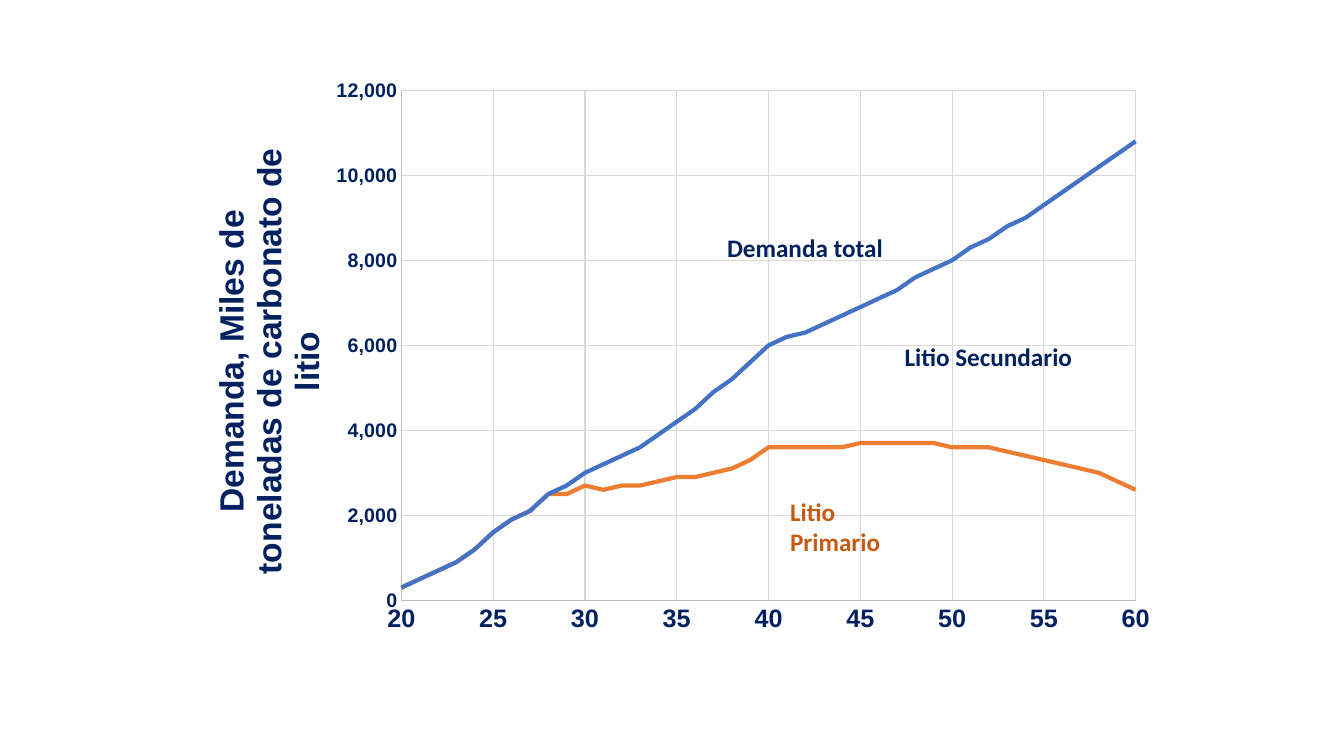
import pptx
import pptx.chart.data
import pptx.dml.color
import pptx.enum.chart
import pptx.enum.text
import pptx.util
from pptx.oxml import parse_xml
from pptx.oxml.ns import nsdecls, qn

RGBColor = pptx.dml.color.RGBColor
NAVY = RGBColor(0x00, 0x20, 0x60)
RUST = RGBColor(0xC5, 0x5A, 0x11)
BLUE = RGBColor(0x44, 0x72, 0xC4)
ORANGE = RGBColor(0xED, 0x7D, 0x31)
AXIS_GREY = RGBColor(0xBF, 0xBF, 0xBF)
GRID_GREY = RGBColor(0xD9, 0xD9, 0xD9)
BLACK = RGBColor(0x00, 0x00, 0x00)

YEARS = range(20, 61)
SHARED_START = [300, 500, 700, 900, 1200, 1600, 1900, 2100, 2500]
TOTAL_DEMAND = SHARED_START + [
    2700, 3000, 3200, 3400, 3600, 3900, 4200, 4500, 4900, 5200, 5600, 6000,
    6200, 6300, 6500, 6700, 6900, 7100, 7300, 7600, 7800, 8000, 8300, 8500,
    8800, 9000, 9300, 9600, 9900, 10200, 10500, 10800]
PRIMARY_LITHIUM = SHARED_START + [
    2500, 2700, 2600, 2700, 2700, 2800, 2900, 2900, 3000, 3100, 3300, 3600,
    3600, 3600, 3600, 3600, 3700, 3700, 3700, 3700, 3700, 3600, 3600, 3600,
    3500, 3400, 3300, 3200, 3100, 3000, 2800, 2600]


def px(length):
    return pptx.util.Emu(length * 9525)


class DemandSlide:
    chart_font = "Arial"
    label_font = "Calibri"

    def __init__(self, presentation):
        self.slide = presentation.slides.add_slide(presentation.slide_layouts[6])

    def style_font(self, font, name, size, color, bold=True):
        font.name = name
        font.size = pptx.util.Pt(size)
        font.bold = bold
        font.color.rgb = color

    def style_line(self, line, color, width):
        line.color.rgb = color
        line.width = pptx.util.Pt(width)

    def place(self, element, **fractions):
        target = "<c:layoutTarget val='inner'/>" if "w" in fractions else ""
        modes = "".join(f"<c:{key}Mode val='edge'/>" for key in "xy")
        values = "".join(f"<c:{key} val='{value}'/>" for key, value in fractions.items())
        layout = element.find(qn("c:layout"))
        if layout is None:
            layout = parse_xml(f"<c:layout {nsdecls('c')}/>")
            tx = element.find(qn("c:tx"))
            element.insert(0 if tx is None else 1, layout)
        for child in list(layout):
            layout.remove(child)
        layout.append(parse_xml(
            f"<c:manualLayout {nsdecls('c')}>{target}{modes}{values}</c:manualLayout>"))

    def axis(self, axis, low, high, step, size):
        axis.minimum_scale = low
        axis.maximum_scale = high
        axis.major_unit = step
        axis.has_major_gridlines = True
        axis.major_tick_mark = pptx.enum.chart.XL_TICK_MARK.NONE
        axis.minor_tick_mark = pptx.enum.chart.XL_TICK_MARK.NONE
        self.style_line(axis.major_gridlines.format.line, GRID_GREY, 0.75)
        self.style_line(axis.format.line, AXIS_GREY, 0.75)
        self.style_font(axis.tick_labels.font, self.chart_font, size, NAVY)

    def axis_title(self, axis, text):
        title = axis.axis_title
        frame = title.text_frame
        frame.text = text
        self.style_font(frame.paragraphs[0].font, self.chart_font, 24, NAVY)
        body = title._element.find(".//" + qn("a:bodyPr"))
        body.set("rot", "-5400000")
        body.set("vert", "horz")
        self.place(title._element, x=0.03, y=0.13)

    def chart(self, left, top, width, height, curves):
        data = pptx.chart.data.XyChartData(number_format="#,##0")
        for name, values, _ in curves:
            series = data.add_series(name)
            for year, value in zip(YEARS, values):
                series.add_data_point(year, value)
        chart = self.slide.shapes.add_chart(
            pptx.enum.chart.XL_CHART_TYPE.XY_SCATTER_SMOOTH_NO_MARKERS,
            px(left), px(top), px(width), px(height), data).chart
        chart.has_legend = False
        chart.has_title = False
        self.style_font(chart.font, self.chart_font, 10, BLACK, False)
        plot = chart.plots[0]
        plot.vary_by_categories = False
        for series, (_, _, color) in zip(plot.series, curves):
            series.smooth = True
            series.marker.style = pptx.enum.chart.XL_MARKER_STYLE.NONE
            self.style_line(series.format.line, color, 3)
        self.axis(chart.category_axis, 20, 60, 5, 18)
        self.axis(chart.value_axis, 0, 12000, 2000, 14)
        chart.category_axis.tick_labels.number_format = "0"
        chart.category_axis.tick_labels.number_format_is_linked = False
        chart.value_axis.tick_labels.number_format = "#,##0"
        chart.value_axis.tick_labels.number_format_is_linked = False
        self.axis_title(chart.value_axis, "Demanda, Miles de toneladas de carbonato de litio")
        plot_area = chart._chartSpace.find(".//" + qn("c:plotArea"))
        self.place(plot_area, x=0.23, y=0.04, w=0.74, h=0.88)

    def label(self, text, left, top, width, color):
        frame = self.slide.shapes.add_textbox(px(left), px(top), px(width), px(38)).text_frame
        frame.word_wrap = True
        frame.auto_size = pptx.enum.text.MSO_AUTO_SIZE.SHAPE_TO_FIT_TEXT
        frame.text = text
        self.style_font(frame.paragraphs[0].font, self.label_font, 18, color)


def main():
    presentation = pptx.Presentation()
    presentation.slide_width = px(1280)
    presentation.slide_height = px(720)
    demand = DemandSlide(presentation)
    demand.chart(165, 64, 945, 552, [
        ("Series 1", TOTAL_DEMAND, BLUE),
        ("Series 2", PRIMARY_LITHIUM, ORANGE),
    ])
    demand.label("Litio Secundario", 852, 320, 180, NAVY)
    demand.label("Litio Primario", 743, 468, 151, RUST)
    demand.label("Demanda total", 683, 217, 169, NAVY)
    presentation.save("out.pptx")


if __name__ == "__main__":
    main()
